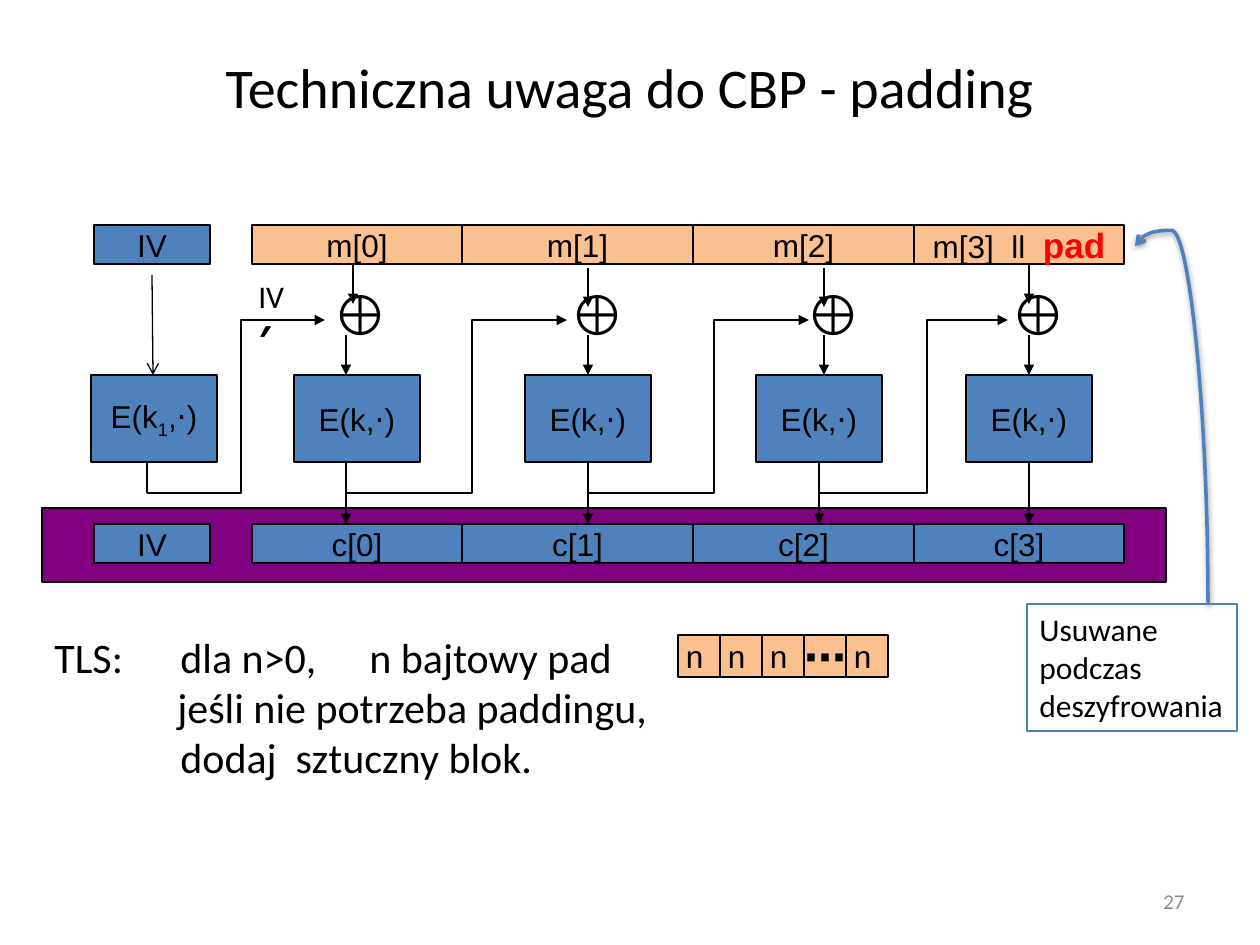
import dataclasses

import lxml.etree
import pptx
import pptx.dml.color
import pptx.enum.shapes
import pptx.enum.text
import pptx.oxml
import pptx.oxml.ns
import pptx.util

PX = 914400 / 126
ALIGN = pptx.enum.text.PP_ALIGN
ANCHOR = pptx.enum.text.MSO_ANCHOR
qn = pptx.oxml.ns.qn


@dataclasses.dataclass(frozen=True)
class Theme:
    black: str = "000000"
    blue: str = "4F81BD"
    orange: str = "FAC090"
    purple: str = "800080"
    red: str = "FF0000"
    gray: str = "8C8C8C"
    sans: str = "Arial"
    body: str = "Calibri"
    title: float = 32
    note: float = 24
    prime: float = 23.9
    pad: float = 20
    label: float = 18
    number: float = 12
    thin: float = 0.75
    thick: float = 2


THEME = Theme()


def px(value):
    return pptx.util.Emu(round(value * PX))


def rgb(value):
    return pptx.dml.color.RGBColor.from_string(value)


def format_run(run, font=THEME.sans, size=THEME.label, color=THEME.black, bold=False):
    run.font.name = font
    run.font.size = pptx.util.Pt(size)
    run.font.color.rgb = rgb(color)
    run.font.bold = bold


def set_line(shape, color=THEME.black, width=THEME.thin, head=None):
    shape.line.color.rgb = rgb(color)
    shape.line.width = pptx.util.Pt(width)
    if head:
        line = shape.element.spPr.find(qn("a:ln"))
        lxml.etree.SubElement(line, qn("a:tailEnd"), type=head)


def fill_text(shape, text, align=ALIGN.LEFT, anchor=ANCHOR.TOP, wrap=False, **style):
    frame = shape.text_frame
    frame.text = text
    frame.word_wrap = wrap
    frame.vertical_anchor = anchor
    for paragraph in frame.paragraphs:
        paragraph.alignment = align
        for run in paragraph.runs:
            format_run(run, **style)
    return frame.paragraphs


@dataclasses.dataclass
class Region:
    """A box on the slide; everything drawn through it is relative to its corner."""
    slide: object
    left: int
    top: int
    width: int
    height: int

    def text(self, x, y, width, height, text, **options):
        shape = self.slide.shapes.add_textbox(
            px(self.left + x), px(self.top + y), px(width), px(height))
        return fill_text(shape, text, **options)

    def box(self, x, y, width, height, fill, text="", line=THEME.black, **options):
        shape = self.slide.shapes.add_shape(
            pptx.enum.shapes.MSO_SHAPE.RECTANGLE,
            px(self.left + x), px(self.top + y), px(width), px(height))
        shape.shadow.inherit = False
        if fill:
            shape.fill.solid()
            shape.fill.fore_color.rgb = rgb(fill)
        else:
            shape.fill.background()
        set_line(shape, line)
        if text:
            options = {"align": ALIGN.CENTER, "anchor": ANCHOR.MIDDLE, **options}
            return fill_text(shape, text, **options)

    def connector(self, x1, y1, x2, y2, head="triangle"):
        shape = self.slide.shapes.add_connector(
            pptx.enum.shapes.MSO_CONNECTOR.STRAIGHT,
            px(self.left + x1), px(self.top + y1), px(self.left + x2), px(self.top + y2))
        set_line(shape, head=head)
        lxml.etree.SubElement(shape.element.spPr, qn("a:effectLst"))

    def feedback(self, x1, turn, x2):
        """Step from the encryption output up to the next XOR."""
        low, high = 268, 95
        points = [(px(self.left + x), px(self.top + y))
                  for x, y in ((x1, low), (turn, low), (turn, high), (x2, high))]
        builder = self.slide.shapes.build_freeform(*points[0], scale=1.0)
        builder.add_line_segments(points[1:], close=False)
        shape = builder.convert_to_shape()
        shape.shadow.inherit = False
        shape.fill.background()
        set_line(shape, head="triangle")


def draw_heading(region):
    region.text(0, 0, region.width, region.height, "Techniczna uwaga do CBP - padding",
                align=ALIGN.CENTER, anchor=ANCHOR.MIDDLE, wrap=True,
                font=THEME.body, size=THEME.title)


def draw_number(region):
    region.text(0, 0, region.width, region.height, "27", align=ALIGN.RIGHT,
                anchor=ANCHOR.MIDDLE, wrap=True,
                font=THEME.body, size=THEME.number, color=THEME.gray)


def draw_cipher_chain(region):
    row_height, cipher_top = 39, 299
    box_top, box_height = 150, 87
    box_bottom = box_top + box_height
    edges = (210, 420, 651, 872, 1082)
    # encryption box, XOR sign, message arrow (x, y), input arrow, output arrow
    columns = ((252, 278, 311, 40, 304, 304), (483, 515, 546, 43, 546, 546),
               (714, 751, 782, 43, 782, 777), (924, 956, 987, 40, 987, 987))
    messages = ("m[0]", "m[1]", "m[2]", "m[3]  ll  ")

    region.box(0, 283, region.width, 74, THEME.purple)
    for y in (0, cipher_top):
        region.box(52, y, 116, row_height, THEME.blue, "IV")
    for index, (box_x, xor_x, message_x, message_y, input_x, output_x) in enumerate(columns):
        left, width = edges[index], edges[index + 1] - edges[index]
        paragraphs = region.box(left, 0, width, row_height, THEME.orange, messages[index])
        region.box(left, cipher_top, width, row_height, THEME.blue, f"c[{index}]")
        region.box(box_x, box_top, 126, box_height, THEME.blue, "E(k,⋅)")
        region.text(xor_x, 48, 69, 81, "⊕", size=THEME.title)
        region.connector(message_x, message_y, message_x, message_y + 39)
        region.connector(input_x, 110, input_x, box_top)
        region.connector(output_x, box_bottom, output_x, cipher_top)
    pad = paragraphs[0].add_run()
    pad.text = "pad"
    format_run(pad, size=THEME.pad, color=THEME.red, bold=True)

    for x1, turn, x2 in ((105, 199, 283), (304, 430, 525), (546, 672, 767), (777, 885, 966)):
        region.feedback(x1, turn, x2)
    draw_iv_encryption(region, box_top, box_height)


def draw_iv_encryption(region, box_top, box_height):
    paragraph = region.box(49, box_top, 126, box_height, THEME.blue, "E(k")[0]
    for text, baseline in (("1", "-25000"), (",⋅)", "0")):
        run = paragraph.add_run()
        run.text = text
        format_run(run)
        run._r.get_or_add_rPr().set("baseline", baseline)
    region.connector(110, 50, 111, box_top, head="arrow")
    region.connector(105, box_top + box_height, 105, 268, head=None)
    paragraph = region.text(204, 46, 60, 63, "IV", wrap=True, font=THEME.body)[0]
    prime = paragraph.add_run()
    prime.text = "′"
    format_run(prime, font=THEME.body, size=THEME.prime, bold=True)


def draw_tls_note(region):
    paragraphs = region.text(
        0, 0, region.width, region.height,
        "TLS:\tdla n>0,\tn bajtowy pad\njeśli nie potrzeba paddingu,\ndodaj  sztuczny blok.",
        wrap=True, font=THEME.body, size=THEME.note)
    for paragraph, indent in zip(paragraphs, (0, 123, 126)):
        properties = paragraph._p.get_or_add_pPr()
        properties.set("marL", str(px(indent)))
        properties.set("indent", "0")
    stops = lxml.etree.SubElement(paragraphs[0]._p.pPr, qn("a:tabLst"))
    for position in (116, 281):
        lxml.etree.SubElement(stops, qn("a:tab"), pos=str(px(position)), algn="l")


def draw_pad_bytes(region):
    labels = ("n ", "n ", "n ", "⋯", "n ")
    size = region.width // len(labels)
    for index, label in enumerate(labels):
        style = {"size": THEME.note, "bold": True} if label == "⋯" else {}
        region.box(index * size, 0, size, region.height, THEME.orange, label, **style)


def draw_removal_note(region):
    """Caption with a curved arrow back up to the pad."""
    curve = region.slide.shapes.add_connector(
        pptx.enum.shapes.MSO_CONNECTOR.CURVE,
        px(region.left - 34), px(region.top - 216),
        px(region.left + 323), px(region.top - 143))
    set_line(curve, THEME.blue, THEME.thick, "arrow")
    properties = curve.element.spPr
    transform = properties.find(qn("a:xfrm"))
    transform.set("rot", "16200000")
    transform.set("flipV", "1")
    geometry = properties.find(qn("a:prstGeom"))
    lxml.etree.SubElement(geometry.find(qn("a:avLst")), qn("a:gd"),
                          name="adj1", fmla="val 104400")
    effects = lxml.etree.SubElement(properties, qn("a:effectLst"))
    shadow = lxml.etree.SubElement(effects, qn("a:outerShdw"), blurRad="40000",
                                   dist="20000", dir="5400000", rotWithShape="0")
    color = lxml.etree.SubElement(shadow, qn("a:srgbClr"), val=THEME.black)
    lxml.etree.SubElement(color, qn("a:alpha"), val="38000")
    region.box(0, 0, region.width, region.height, None, "Usuwane \npodczas\ndeszyfrowania",
               line=THEME.blue, align=ALIGN.LEFT, anchor=ANCHOR.TOP, font=THEME.body)


def main():
    presentation = pptx.Presentation()
    presentation.slide_width = px(1260)
    presentation.slide_height = px(945)
    slide = presentation.slides.add_slide(presentation.slide_layouts[6])
    draw_heading(Region(slide, 63, 38, 1134, 97))
    draw_number(Region(slide, 903, 876, 294, 50))
    draw_cipher_chain(Region(slide, 42, 225, 1124, 357))
    draw_tls_note(Region(slide, 42, 625, 633, 165))
    draw_pad_bytes(Region(slide, 678, 635, 210, 42))
    draw_removal_note(Region(slide, 1027, 604, 210, 127))
    presentation.save("out.pptx")


if __name__ == "__main__":
    main()
